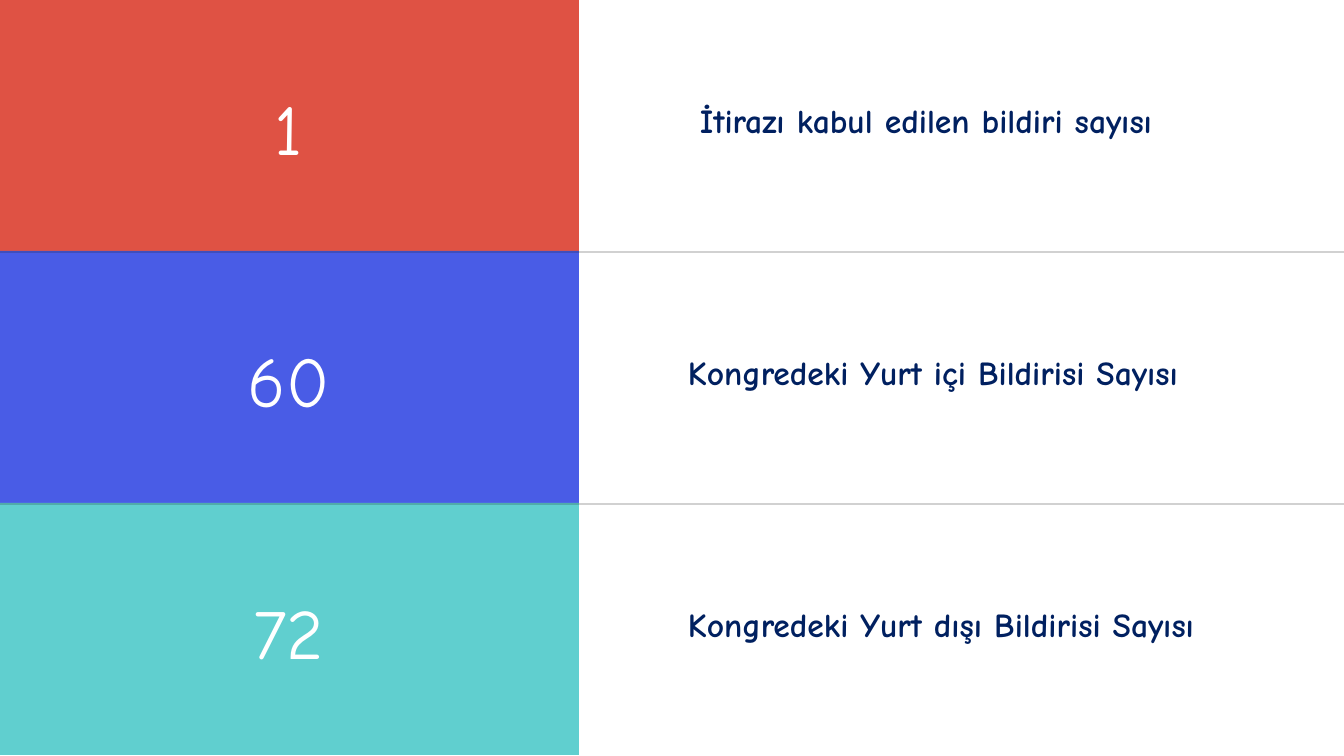
"""Build a slide with three congress paper counts beside their labels."""
from dataclasses import dataclass

import pptx
import pptx.dml.color
import pptx.enum.shapes
import pptx.enum.text
import pptx.util
from lxml import etree
from pptx.oxml.ns import qn

STATISTICS = [
    ("1", " İtirazı kabul edilen bildiri sayısı", "DF5244"),
    ("60", "Kongredeki Yurt içi Bildirisi Sayısı", "495CE6"),
    ("72", "Kongredeki Yurt dışı Bildirisi Sayısı", "60CFCF"),
]


@dataclass(frozen=True)
class Theme:
    font: str = "Comic Neue"
    number_color: str = "FFFFFF"
    label_color: str = "002060"
    rule_color: str = "191918"
    rule_opacity: int = 30
    rule_width: float = 0.75
    number_size: float = 50.7
    label_size: float = 24


THEME = Theme()
EMU_PER_PX = 914400 / 100.8
SLIDE_WIDTH, SLIDE_HEIGHT = 1344, 756
ROW_HEIGHT = SLIDE_HEIGHT // len(STATISTICS)
PANEL_TOP, PANEL_WIDTH = -1, 579
NUMBER_BOX = (50, 84, 477, 86)
LABEL_BOX = (688, 80, 536, 61)


def px(*lengths):
    return [pptx.util.Emu(round(length * EMU_PER_PX)) for length in lengths]


def rgb(color):
    return pptx.dml.color.RGBColor.from_string(color)


def add_text(slide, text, box, row_top, *, size, color, align, bold=False, line_spacing=None):
    left, top, width, height = box
    shape = slide.shapes.add_textbox(*px(left, row_top + top, width, height))
    frame = shape.text_frame
    frame.word_wrap = True
    frame.auto_size = pptx.enum.text.MSO_AUTO_SIZE.SHAPE_TO_FIT_TEXT
    frame.margin_left = frame.margin_right = frame.margin_top = frame.margin_bottom = 0
    paragraph = frame.paragraphs[0]
    paragraph.alignment = align
    paragraph.line_spacing = line_spacing
    run = paragraph.add_run()
    run.text = text
    run.font.name = THEME.font
    run.font.size = pptx.util.Pt(size)
    run.font.bold = bold
    run.font.color.rgb = rgb(color)


def add_panel(slide, row_top, color):
    shape = slide.shapes.add_shape(
        pptx.enum.shapes.MSO_SHAPE.RECTANGLE,
        *px(0, row_top + PANEL_TOP, PANEL_WIDTH, ROW_HEIGHT),
    )
    shape.shadow.inherit = False
    shape.fill.solid()
    shape.fill.fore_color.rgb = rgb(color)
    shape.line.fill.background()


def add_rule(slide, y):
    connector = slide.shapes.add_connector(
        pptx.enum.shapes.MSO_CONNECTOR.STRAIGHT, *px(0, y, SLIDE_WIDTH, y)
    )
    connector.line.width = pptx.util.Pt(THEME.rule_width)
    connector.line.color.rgb = rgb(THEME.rule_color)
    properties = connector._element.spPr
    color = properties.find(".//" + qn("a:srgbClr"))
    etree.SubElement(color, qn("a:alpha"), val=str(THEME.rule_opacity * 1000))
    etree.SubElement(properties, qn("a:effectLst"))


def main():
    presentation = pptx.Presentation()
    presentation.slide_width, presentation.slide_height = px(SLIDE_WIDTH, SLIDE_HEIGHT)
    slide = presentation.slides.add_slide(presentation.slide_layouts[6])
    alignment = pptx.enum.text.PP_ALIGN

    for row, (number, label, color) in enumerate(STATISTICS):
        row_top = row * ROW_HEIGHT
        add_panel(slide, row_top, color)
        add_text(slide, number, NUMBER_BOX, row_top, size=THEME.number_size,
                 color=THEME.number_color, align=alignment.CENTER)
        add_text(slide, label, LABEL_BOX, row_top, size=THEME.label_size,
                 color=THEME.label_color, align=alignment.JUSTIFY, bold=True,
                 line_spacing=1.5)
    for row in range(1, len(STATISTICS)):
        add_rule(slide, row * ROW_HEIGHT)

    presentation.save("out.pptx")


if __name__ == "__main__":
    main()
